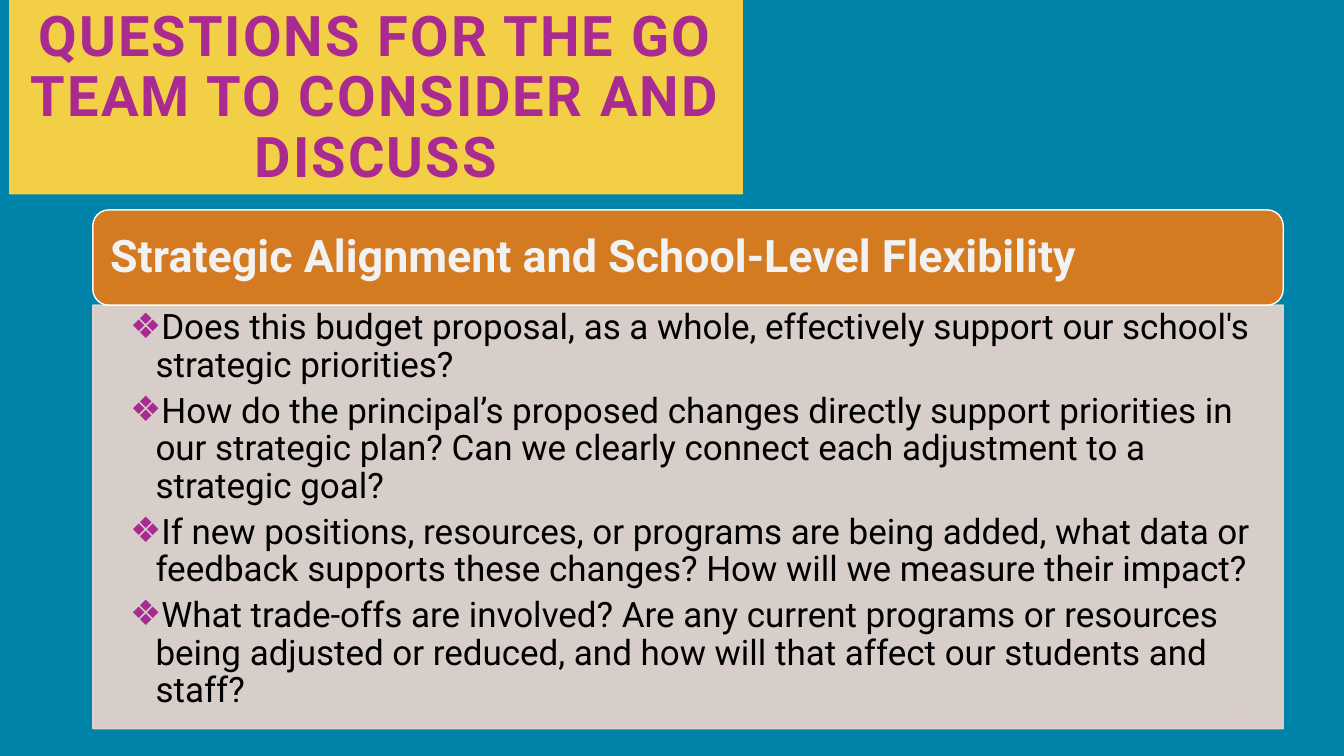
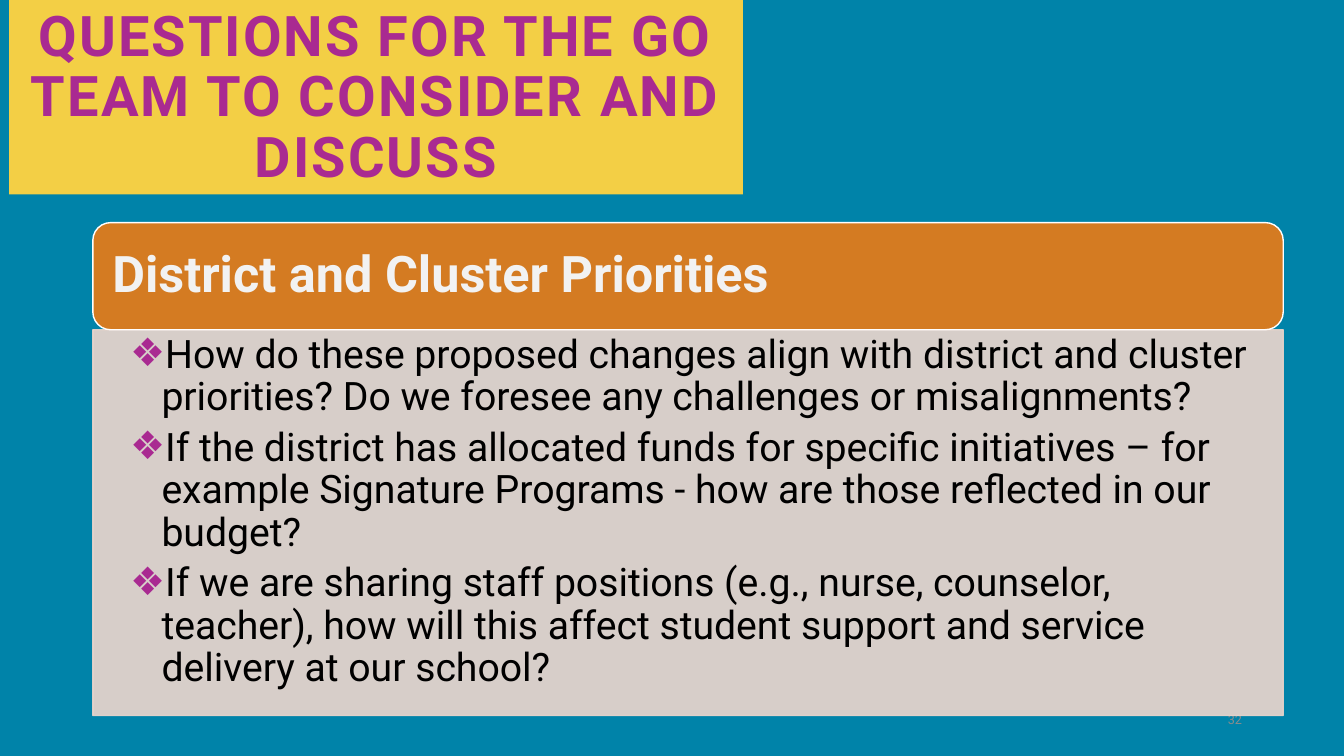
from dataclasses import dataclass

import pptx
import pptx.dml.color
import pptx.enum.shapes
import pptx.enum.text
import pptx.oxml
import pptx.oxml.ns
import pptx.util
from lxml import etree

Cm = pptx.util.Cm
Pt = pptx.util.Pt
qn = pptx.oxml.ns.qn
Anchor = pptx.enum.text.MSO_ANCHOR
Align = pptx.enum.text.PP_ALIGN


@dataclass(frozen=True)
class Theme:
    font: str = "Roboto"
    background: str = "0083A9"
    title_fill: str = "F3CF45"
    accent: str = "A92A91"
    header_fill: str = "D47B22"
    header_line: str = "FFFFFF"
    header_text: str = "F2F2F2"
    panel: str = "EFD7CD"
    panel_opacity: int = 90
    body_text: str = "000000"
    number: str = "8C8C8C"
    title_size: int = 40
    number_size: int = 9
    line_spacing: float = 0.9


@dataclass(frozen=True)
class Box:
    left: float
    top: float
    width: float
    height: float

    def place(self, sp):
        sp.left, sp.top = Cm(self.left), Cm(self.top)
        sp.width, sp.height = Cm(self.width), Cm(self.height)

    def split(self, height):
        return (
            Box(self.left, self.top, self.width, height),
            Box(self.left, self.top + height, self.width, self.height - height),
        )


@dataclass(frozen=True)
class Section:
    number: str
    heading: str
    questions: tuple
    box: Box
    heading_size: int
    body_size: int
    indent: float


THEME = Theme()
TITLE = "QUESTIONS FOR THE GO TEAM TO CONSIDER AND DISCUSS"
TITLE_BOX = Box(0.23, 0, 18.49, 4.9)
NUMBER_BOX = Box(23.93, 17.65, 7.62, 1.02)
SECTIONS = (
    Section(
        "31",
        "Strategic Alignment and School-Level Flexibility",
        (
            "Does this budget proposal, as a whole, effectively support our school's strategic priorities?",
            "How do the principal’s proposed changes directly support priorities in our strategic plan? "
            "Can we clearly connect each adjustment to a strategic goal?",
            "If new positions, resources, or programs are being added, what data or feedback supports "
            "these changes? How will we measure their impact?",
            "What trade-offs are involved? Are any current programs or resources being adjusted or "
            "reduced, and how will that affect our students and staff?",
        ),
        Box(2.34, 5.29, 30, 13.07),
        32, 25, 0.64,
    ),
    Section(
        "32",
        "District and Cluster Priorities",
        (
            "How do these proposed changes align with district and cluster priorities? "
            "Do we foresee any challenges or misalignments?",
            "If the district has allocated funds for specific initiatives – for example Signature "
            "Programs - how are those reflected in our budget?",
            "If we are sharing staff positions (e.g., nurse, counselor, teacher), how will this affect "
            "student support and service delivery at our school?",
        ),
        Box(2.34, 5.61, 30, 12.42),
        36, 28, 0.79,
    ),
)


def rgb(value):
    return pptx.dml.color.RGBColor.from_string(value)


def fill(sp, color):
    sp.fill.solid()
    sp.fill.fore_color.rgb = rgb(color)


def outline(sp, color):
    sp.line.color.rgb = rgb(color)
    sp.line.width = Pt(1)


def set_opacity(sp, percent):
    for color in sp._element.spPr.iter(qn("a:srgbClr")):
        etree.SubElement(color, qn("a:alpha"), val=str(percent * 1000))


def set_frame(tf, anchor, margins):
    tf.word_wrap = True
    tf.auto_size = pptx.enum.text.MSO_AUTO_SIZE.NONE
    tf.vertical_anchor = anchor
    tf.margin_left, tf.margin_top, tf.margin_right, tf.margin_bottom = map(Cm, margins)


def format_paragraph(p, size, color, bold=False, align=Align.LEFT):
    p.alignment = align
    p.line_spacing = THEME.line_spacing
    p.space_before = Pt(0)
    for r in p.runs:
        r.font.name = THEME.font
        r.font.size = Pt(size)
        r.font.bold = bold
        r.font.color.rgb = rgb(color)


def add_bullet(p, indent):
    pPr = p._p.get_or_add_pPr()
    pPr.set("marL", str(Cm(indent)))
    pPr.set("indent", str(-Cm(indent)))
    color = etree.SubElement(pPr, qn("a:buClr"))
    etree.SubElement(color, qn("a:srgbClr"), val=THEME.accent)
    etree.SubElement(pPr, qn("a:buChar"), char="❖")


def fill_title(s, box):
    sp = s.shapes.title
    box.place(sp)
    fill(sp, THEME.title_fill)
    tf = sp.text_frame
    tf.text = TITLE
    set_frame(tf, Anchor.BOTTOM, (0.25, 0.13, 0.25, 0.13))
    p = tf.paragraphs[0]
    format_paragraph(p, THEME.title_size, THEME.accent, True, Align.CENTER)
    p.runs[0]._r.get_or_add_rPr().set("spc", "150")


def add_number(s, box, text):
    sp = s.shapes.add_textbox(0, 0, 0, 0)
    box.place(sp)
    tf = sp.text_frame
    tf.text = text
    set_frame(tf, Anchor.MIDDLE, (0.25, 0.13, 0.25, 0.13))
    format_paragraph(tf.paragraphs[0], THEME.number_size, THEME.number, align=Align.RIGHT)
    s.shapes.title._element.addprevious(sp._element)


def add_header(s, box, section):
    sp = s.shapes.add_shape(pptx.enum.shapes.MSO_SHAPE.ROUNDED_RECTANGLE, 0, 0, 0, 0)
    box.place(sp)
    sp.shadow.inherit = False
    fill(sp, THEME.header_fill)
    outline(sp, THEME.header_line)
    tf = sp.text_frame
    tf.text = section.heading
    margin = section.heading_size * 0.01
    set_frame(tf, Anchor.MIDDLE, (margin, 0, margin, 0))
    format_paragraph(tf.paragraphs[0], section.heading_size, THEME.header_text, True)


def fill_questions(s, box, section):
    sp = s.placeholders[1]
    box.place(sp)
    fill(sp, THEME.panel)
    outline(sp, THEME.panel)
    set_opacity(sp, THEME.panel_opacity)
    tf = sp.text_frame
    tf.text = "\n".join(section.questions)
    set_frame(tf, Anchor.TOP, (0.94, 0.11, section.body_size * 0.0254, 0.11))
    for p in tf.paragraphs:
        format_paragraph(p, section.body_size, THEME.body_text)
        p.space_after = Pt(section.body_size * 0.22)
        add_bullet(p, section.indent)


def add_section_slide(prs, section):
    s = prs.slides.add_slide(prs.slide_layouts[1])
    header_box, questions_box = section.box.split(section.heading_size * 0.075)
    fill_title(s, TITLE_BOX)
    fill_questions(s, questions_box, section)
    add_header(s, header_box, section)
    add_number(s, NUMBER_BOX, section.number)


def main():
    prs = pptx.Presentation()
    prs.slide_width, prs.slide_height = Cm(33.87), Cm(19.05)
    fill(prs.slide_master.background, THEME.background)
    for section in SECTIONS:
        add_section_slide(prs, section)
    prs.save("out.pptx")


if __name__ == "__main__":
    main()
